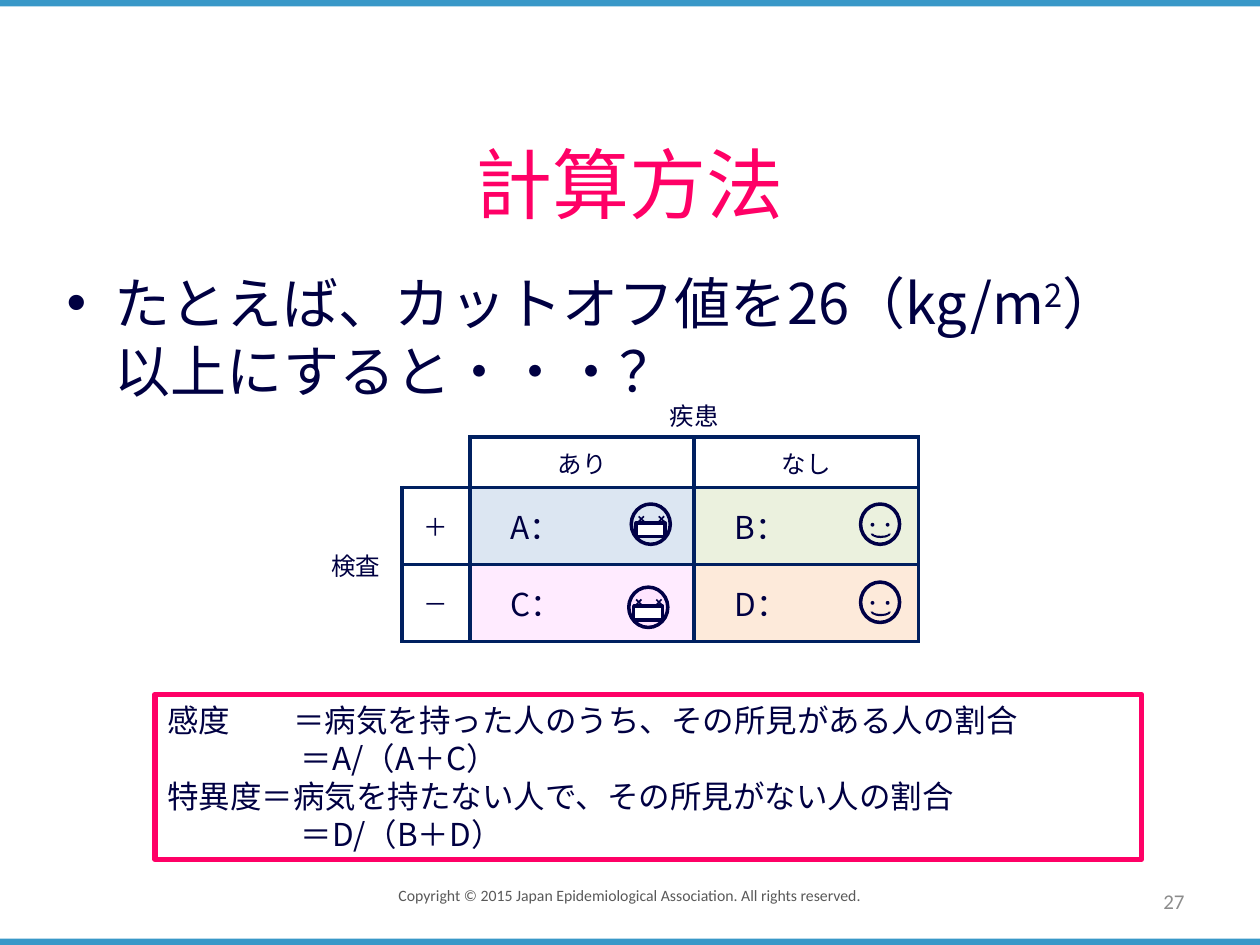
from lxml import etree
from pptx import Presentation
from pptx.dml.color import RGBColor
from pptx.enum.shapes import MSO_SHAPE as Shape
from pptx.enum.text import MSO_ANCHOR as Anchor, PP_ALIGN as Align
from pptx.oxml.ns import qn
from pptx.util import Inches, Pt

COLORS = {
    "bar": "3998C8", "accent": "FF0066", "text": "000042", "face": "000046",
    "border": "002060", "copyright": "595959", "number": "8C8C8C",
    "mask": "FFFFFF", "A": "DCE6F2", "B": "EBF1DE", "C": "FFEBFF",
    "D": "FDEADA", "C face": "FFE5FF",
}
JAPANESE = "Noto Sans CJK JP"
LATIN = "Calibri"

COLUMNS = [0.63, 0.54, 1.78, 1.78]
ROWS = [0.61, 0.4, 0.61, 0.61]
FRAMED = {(1, 2), (1, 3)} | {(row, col) for row in (2, 3) for col in (1, 2, 3)}
SIDES = {"lnL": (0, -1), "lnR": (0, 1), "lnT": (-1, 0), "lnB": (1, 0)}
HEADINGS = {(0, 2): "疾患", (1, 2): "あり", (1, 3): "なし",
            (2, 0): "検査", (2, 1): "＋", (3, 1): "－"}
OUTCOMES = {(2, 2): "A", (2, 3): "B", (3, 2): "C", (3, 3): "D"}


def rgb(name):
    return RGBColor.from_string(COLORS[name])


def style(paragraph, size, color="text", face=JAPANESE, align=Align.LEFT, line=None):
    paragraph.alignment = align
    if line:
        paragraph.line_spacing = Pt(line)
    font = paragraph.font
    font.size, font.name = Pt(size), face
    font.color.rgb = rgb(color)
    east_asian = etree.SubElement(font._element, qn("a:ea"))
    east_asian.set("typeface", face)


def indent(paragraph, left, first=0):
    props = paragraph._p.get_or_add_pPr()
    props.set("marL", str(Inches(left)))
    props.set("indent", str(Inches(first)))
    return props


def add_text_frame(slide, left, top, width, height, anchor=Anchor.TOP):
    box = slide.shapes.add_textbox(Inches(left), Inches(top), Inches(width), Inches(height))
    frame = box.text_frame
    frame.word_wrap = True
    frame.vertical_anchor = anchor
    return frame


def add_label(slide, text, place, anchor=Anchor.TOP, **look):
    paragraph = add_text_frame(slide, *place, anchor).paragraphs[0]
    paragraph.text = text
    style(paragraph, **look)


def add_figure(shapes, kind, left, top, width, height, fill=None, line=None, weight=2, turn=0):
    figure = shapes.add_shape(kind, Inches(left), Inches(top), Inches(width), Inches(height))
    figure.shadow.inherit = False
    figure.rotation = turn
    if fill:
        figure.fill.solid()
        figure.fill.fore_color.rgb = rgb(fill)
    else:
        figure.fill.background()
    if line:
        figure.line.color.rgb = rgb(line)
        figure.line.width = Pt(weight)
    else:
        figure.line.fill.background()
    return figure


def add_question(slide):
    question = add_text_frame(slide, 0.43, 2.07, 8.82, 3.71).paragraphs[0]
    props = indent(question, 0.38, -0.38)
    etree.SubElement(props, qn("a:buFont")).set("typeface", "Arial")
    etree.SubElement(props, qn("a:buChar")).set("char", "•")
    style(question, 32, line=39)
    question.add_run().text = "たとえば、カットオフ値を26（kg/m"
    square = question.add_run()
    square.text = "2"
    square.font._element.set("baseline", "30000")
    question.add_run().text = "）以上にすると・・・？"


def draw_borders(cell, row, col):
    """Draw each side that touches a framed cell and hide the others."""
    props = cell._tc.get_or_add_tcPr()
    for side, (down, right) in SIDES.items():
        edge = etree.SubElement(props, qn(f"a:{side}"))
        if FRAMED & {(row, col), (row + down, col + right)}:
            edge.set("w", str(Pt(2.25)))
            fill = etree.SubElement(edge, qn("a:solidFill"))
            etree.SubElement(fill, qn("a:srgbClr")).set("val", COLORS["border"])
        else:
            etree.SubElement(edge, qn("a:noFill"))


def add_cross_table(slide):
    frame = slide.shapes.add_table(len(ROWS), len(COLUMNS), Inches(2.56), Inches(2.86),
                                   Inches(sum(COLUMNS)), Inches(sum(ROWS)))
    table = frame.table
    table.first_row = table.horz_banding = False
    for column, width in zip(table.columns, COLUMNS):
        column.width = Inches(width)
    for table_row, height in zip(table.rows, ROWS):
        table_row.height = Inches(height)
    table.cell(0, 2).merge(table.cell(0, 3))
    table.cell(2, 0).merge(table.cell(3, 0))

    for row in range(len(ROWS)):
        for col in range(len(COLUMNS)):
            cell = table.cell(row, col)
            outcome = OUTCOMES.get((row, col))
            draw_borders(cell, row, col)
            cell.margin_left = Inches(0.32 if outcome else 0.07)
            cell.margin_right = Inches(0.07)
            cell.margin_top = cell.margin_bottom = Inches(0.04)
            cell.vertical_anchor = Anchor.MIDDLE if row else Anchor.BOTTOM
            paragraph = cell.text_frame.paragraphs[0]
            if outcome:
                cell.fill.solid()
                cell.fill.fore_color.rgb = rgb(outcome)
                paragraph.text = f"{outcome}："
                style(paragraph, 18)
            else:
                cell.fill.background()
                paragraph.text = HEADINGS.get((row, col), "")
                style(paragraph, 14, align=Align.CENTER if col else Align.LEFT)


def add_head(slide, left, top, fill):
    features = slide.shapes.add_group_shape().shapes
    add_figure(features, Shape.OVAL, left, top, 0.31, 0.32, fill, "face")
    return features


def add_sick_face(slide, left, top, fill):
    features = add_head(slide, left, top, fill)
    add_figure(features, Shape.RECTANGLE, left + 0.04, top + 0.15, 0.23, 0.11, "mask", "face")
    for offset in (0.05, 0.21):
        eye = add_figure(features, Shape.CROSS, left + offset, top + 0.09, 0.06, 0.06,
                         "face", turn=43.8)
        eye.adjustments[0] = 0.39


def add_healthy_face(slide, left, top, fill):
    features = add_head(slide, left, top, fill)
    for offset in (0.08, 0.2):
        add_figure(features, Shape.OVAL, left + offset, top + 0.15, 0.03, 0.03, "face")
    add_figure(features, Shape.BLOCK_ARC, left + 0.08, top + 0.2, 0.16, 0.07, "face", turn=180)


def add_formulas(slide):
    box = add_figure(slide.shapes, Shape.RECTANGLE, 1.23, 5.51, 7.83, 1.31,
                     line="accent", weight=3)
    frame = box.text_frame
    frame.word_wrap = True
    frame.vertical_anchor = Anchor.TOP
    frame.text = "\n".join([
        "感度\t＝病気を持った人のうち、その所見がある人の割合",
        "＝A/（A＋C）",
        "特異度＝病気を持たない人で、その所見がない人の割合",
        "＝D/（B＋D）",
    ])
    for number, paragraph in enumerate(frame.paragraphs):
        props = indent(paragraph, 1.06 if number % 2 else 0)
        if number == 0:
            tabs = etree.SubElement(props, qn("a:tabLst"))
            etree.SubElement(tabs, qn("a:tab"), pos=str(Inches(0.8)), algn="l")
        style(paragraph, 18, line=21.7)


def main():
    deck = Presentation()
    deck.slide_width, deck.slide_height = Inches(10), Inches(7.5)
    slide = deck.slides.add_slide(deck.slide_layouts[6])

    for top in (0, 7.45):
        add_figure(slide.shapes, Shape.RECTANGLE, 0, top, 10, 0.05, "bar")
    add_label(slide, "Copyright © 2015 Japan Epidemiological Association. All rights reserved.",
              (2.87, 6.98, 4.25, 0.25), size=9, color="copyright", face=LATIN,
              align=Align.CENTER)
    add_label(slide, "計算方法", (1.62, 0.98, 6.75, 0.94), Anchor.MIDDLE,
              size=44, color="accent", align=Align.CENTER)
    add_question(slide)
    add_cross_table(slide)
    add_formulas(slide)
    add_label(slide, "27", (7.17, 6.95, 2.33, 0.4), Anchor.MIDDLE,
              size=12, color="number", face=LATIN, align=Align.RIGHT)
    add_sick_face(slide, 5.01, 4, "A")
    add_healthy_face(slide, 6.83, 4, "B")
    add_sick_face(slide, 4.99, 4.66, "C face")
    add_healthy_face(slide, 6.83, 4.62, "D")
    deck.save("out.pptx")


if __name__ == "__main__":
    main()
